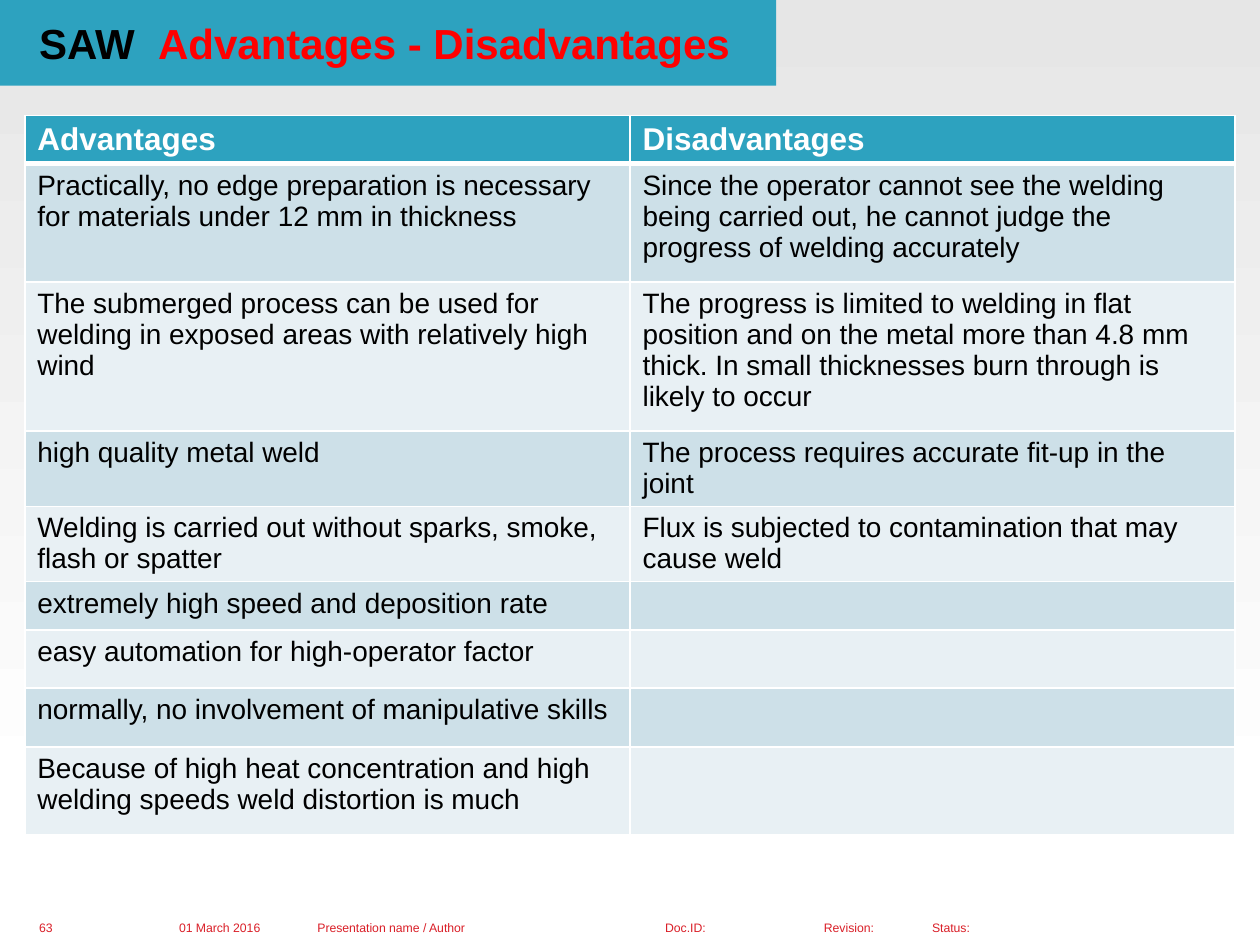
from dataclasses import dataclass

from lxml import etree
from pptx import Presentation
from pptx.dml.color import RGBColor
from pptx.enum.shapes import MSO_SHAPE
from pptx.enum.text import MSO_ANCHOR, PP_ALIGN
from pptx.oxml.ns import qn
from pptx.util import Cm, Pt

RECTANGLE = MSO_SHAPE.RECTANGLE
TOP, MIDDLE = MSO_ANCHOR.TOP, MSO_ANCHOR.MIDDLE
LEFT = PP_ALIGN.LEFT


@dataclass(frozen=True)
class Theme:
    font: str = "Arial"
    accent: str = "2DA2BF"
    bands: tuple = ("CDE0E8", "E8F0F4")
    white: str = "FFFFFF"
    black: str = "000000"
    highlight: str = "FF0000"
    footer: str = "DA1F28"
    background: str = "E6E6E6"
    title_size: int = 24
    header_size: int = 18
    body_size: int = 16
    footer_size: int = 7


THEME = Theme()

ROWS = [  # height in cm, advantage, disadvantage
    (0.86, "Advantages", "Disadvantages"),
    (2.39, "Practically, no edge preparation is necessary for materials under 12 mm in thickness",
     "Since the operator cannot see the welding being carried out, he cannot judge the "
     "progress of welding accurately"),
    (3, "The submerged process can be used for welding in exposed areas with relatively high wind",
     "The progress is limited to welding in flat position and on the metal more than 4.8 mm "
     "thick. In small thicknesses burn through is likely to occur"),
    (1.52, "high quality metal weld", "The process requires accurate fit-up in the joint"),
    (1.52, "Welding is carried out without sparks, smoke, flash or spatter",
     "Flux is subjected to contamination that may cause weld"),
    (0.97, "extremely high speed and deposition rate", ""),
    (1.17, "easy automation for high-operator factor", ""),
    (1.19, "normally, no involvement of manipulative skills", ""),
    (1.78, "Because of high heat concentration and high welding speeds weld distortion is much", ""),
]

FOOTER_FIELDS = [  # offset and width in cm, text
    (0, 1, "63"),
    (2.82, 2.8, "01 March 2016"),
    (5.61, 6.8, "Presentation name / Author"),
    (12.62, 1.6, "Doc.ID:"),
    (15.82, 1.6, "Revision:"),
    (18, 1.6, "Status:"),
]


def color(value):
    return RGBColor.from_string(value)


def style_run(run, size, value, bold=False):
    run.font.name = THEME.font
    run.font.size = Pt(size)
    run.font.bold = bold
    run.font.color.rgb = color(value)


def set_insets(text_frame, left, top, right, bottom):
    text_frame.margin_left, text_frame.margin_right = Cm(left), Cm(right)
    text_frame.margin_top, text_frame.margin_bottom = Cm(top), Cm(bottom)


def set_borders(cell, widths):
    """Draw white borders; widths maps the side letters L, R, T, B to points."""
    properties = cell._tc.get_or_add_tcPr()
    for index, side in enumerate("LRTB"):
        line = etree.Element(qn(f"a:ln{side}"), w=str(Pt(widths[side])))
        fill = etree.SubElement(line, qn("a:solidFill"))
        etree.SubElement(fill, qn("a:srgbClr"), val=THEME.white)
        properties.insert(index, line)


def fill_background(slide):
    fill = slide.background.fill
    fill.gradient()
    fill.gradient_angle = 270
    stops = zip(fill.gradient_stops, (THEME.background, THEME.white), (0, 0.85))
    for stop, value, position in stops:
        stop.color.rgb = color(value)
        stop.position = position


def add_title(slide, left, top, width, height):
    shape = slide.shapes.add_shape(RECTANGLE, Cm(left), Cm(top), Cm(width), Cm(height))
    shape.shadow.inherit = False
    shape.fill.solid()
    shape.fill.fore_color.rgb = color(THEME.accent)
    shape.line.fill.background()
    text_frame = shape.text_frame
    text_frame.word_wrap = False
    text_frame.vertical_anchor = TOP
    set_insets(text_frame, 0.79, 0.36, 0.79, 0.36)
    paragraph = text_frame.paragraphs[0]
    paragraph.alignment = LEFT
    for text, value in (("SAW  ", THEME.black), ("Advantages - Disadvantages", THEME.highlight)):
        run = paragraph.add_run()
        run.text = text
        style_run(run, THEME.title_size, value, bold=True)


def add_comparison(slide, left, top, width):
    height = sum(row[0] for row in ROWS)
    table = slide.shapes.add_table(len(ROWS), 2, Cm(left), Cm(top), Cm(width), Cm(height)).table
    table.horz_banding = False
    for column in table.columns:
        column.width = Cm(width / 2)
    for row_index, (row_height, *texts) in enumerate(ROWS):
        table.rows[row_index].height = Cm(row_height)
        is_header = row_index == 0
        fill = THEME.accent if is_header else THEME.bands[(row_index - 1) % 2]
        size = THEME.header_size if is_header else THEME.body_size
        text_color = THEME.white if is_header else THEME.black
        # The rule under the header is shared by the first two rows
        borders = {"L": 1, "R": 1, "T": 3 if row_index == 1 else 1, "B": 3 if is_header else 1}
        for column_index, text in enumerate(texts):
            cell = table.cell(row_index, column_index)
            cell.fill.solid()
            cell.fill.fore_color.rgb = color(fill)
            set_borders(cell, borders)
            if text:
                cell.text_frame.text = text
                style_run(cell.text_frame.paragraphs[0].runs[0], size, text_color, is_header)
            else:
                # Keep empty cells from stretching their row
                cell.margin_top = cell.margin_bottom = 0


def add_footer(slide, left, top, height):
    for offset, width, text in FOOTER_FIELDS:
        box = slide.shapes.add_textbox(Cm(left + offset), Cm(top), Cm(width), Cm(height))
        text_frame = box.text_frame
        text_frame.word_wrap = True
        text_frame.vertical_anchor = MIDDLE
        set_insets(text_frame, 0.1, 0.1, 0.1, 0.15)
        text_frame.text = text
        style_run(text_frame.paragraphs[0].runs[0], THEME.footer_size, THEME.footer)


def main():
    presentation = Presentation()
    presentation.slide_width, presentation.slide_height = Cm(25.4), Cm(19.05)
    slide = presentation.slides.add_slide(presentation.slide_layouts[6])
    fill_background(slide)
    add_title(slide, 0, 0, 15.65, 1.73)
    add_comparison(slide, 0.5, 2.33, 24.4)
    add_footer(slide, 0.69, 18.52, 0.41)
    presentation.save("out.pptx")


if __name__ == "__main__":
    main()
